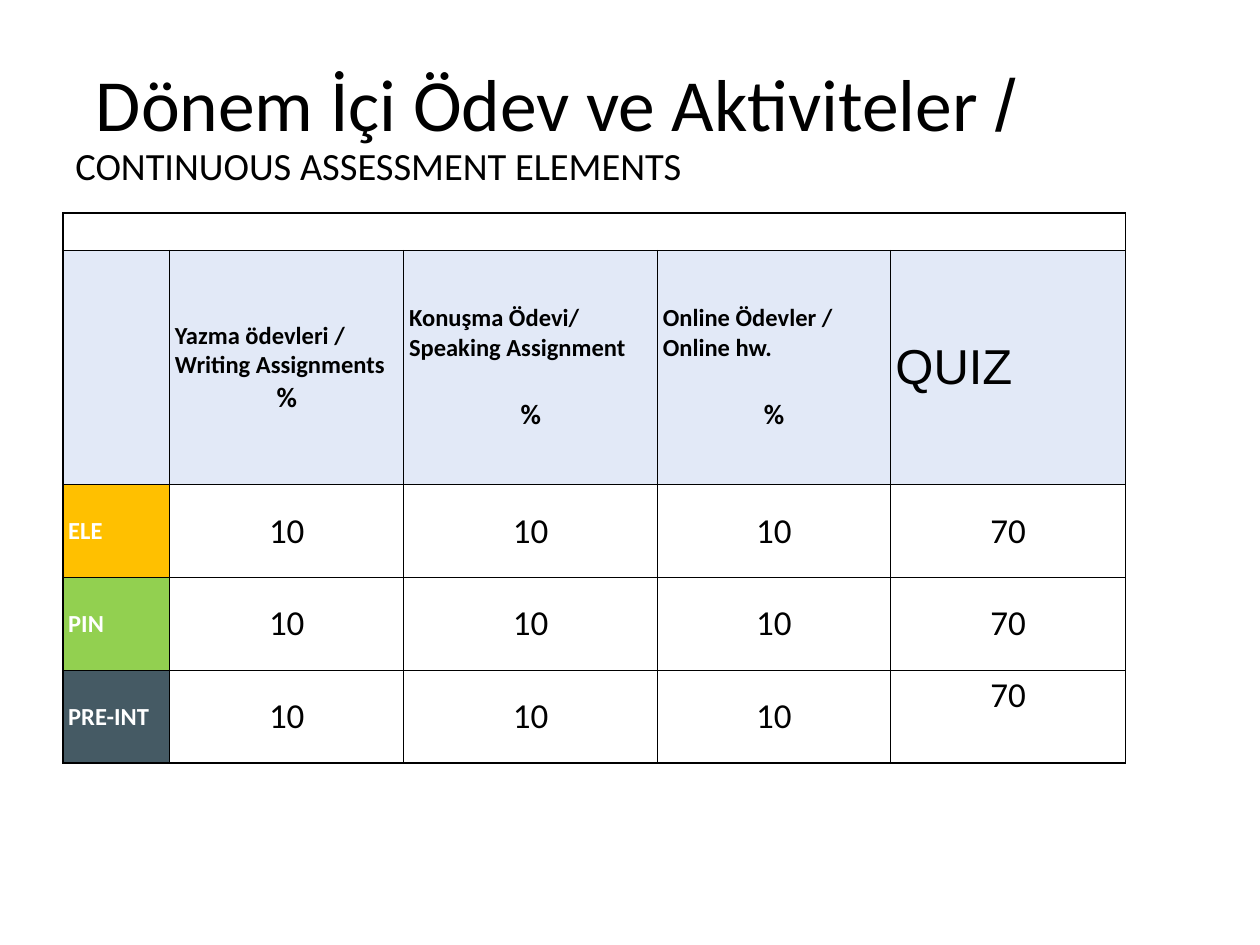
from dataclasses import dataclass

from lxml.etree import SubElement
from pptx import Presentation
from pptx.dml.color import RGBColor
from pptx.enum.text import MSO_ANCHOR as Anchor, PP_ALIGN as Align
from pptx.oxml.ns import qn
from pptx.util import Pt


@dataclass(frozen=True)
class Theme:
    ink: str = "000000"
    white: str = "FFFFFF"
    header: str = "E2E9F7"
    elementary: str = "FFC000"
    pre_intermediate: str = "92D050"
    intermediate: str = "455A64"
    body_font: str = "Calibri"
    alt_font: str = "Arial"
    title_size: int = 42
    quiz_size: int = 28
    subtitle_size: int = 22
    value_size: int = 20
    percent_size: int = 16
    label_size: int = 14
    border: float = 0.75


THEME = Theme()


def add_text(para, text, size, font=THEME.body_font, color=THEME.ink, bold=False):
    span = para.add_run()
    span.text = text
    span.font.size = Pt(size)
    span.font.name = font
    span.font.bold = bold
    span.font.color.rgb = RGBColor.from_string(color)


class Page:
    def __init__(self, deck, theme):
        self.theme = theme
        self.slide = deck.slides.add_slide(deck.slide_layouts[6])

    def title(self, left, top, width, height, spans):
        box = self.slide.shapes.add_textbox(Pt(left), Pt(top), Pt(width), Pt(height))
        frame = box.text_frame
        frame.word_wrap = True
        frame.vertical_anchor = Anchor.BOTTOM
        para = frame.paragraphs[0]
        para.line_spacing = 0.9
        for text, size, font in spans:
            add_text(para, text, size, font)

    def table(self, left, top, widths, heights):
        table = self.slide.shapes.add_table(
            len(heights), len(widths), Pt(left), Pt(top),
            Pt(sum(widths)), Pt(sum(heights))).table
        table.first_row = table.horz_banding = False
        for column, width in zip(table.columns, widths):
            column.width = Pt(width)
        for row, height in zip(table.rows, heights):
            row.height = Pt(height)
        for cell in table.iter_cells():
            self.cell_style(cell)
        return table

    def cell_style(self, cell):
        cell.margin_left = cell.margin_right = Pt(3)
        cell.margin_top = cell.margin_bottom = Pt(2)
        cell.vertical_anchor = Anchor.MIDDLE
        properties = cell._tc.get_or_add_tcPr()
        for side in ("a:lnL", "a:lnR", "a:lnT", "a:lnB"):
            line = SubElement(properties, qn(side), w=str(Pt(self.theme.border)))
            fill = SubElement(line, qn("a:solidFill"))
            SubElement(fill, qn("a:srgbClr"), val=self.theme.ink)
        cell.fill.background()

    def fill(self, cell, color):
        cell.fill.solid()
        cell.fill.fore_color.rgb = RGBColor.from_string(color)

    def header(self, cell, label, gap):
        frame = cell.text_frame
        add_text(frame.paragraphs[0], label, self.theme.label_size, bold=True)
        para = frame.add_paragraph()
        para.alignment = Align.CENTER
        para.space_before = Pt(gap)
        add_text(para, "%", self.theme.percent_size, bold=True)

    def level(self, cells, name, color, values):
        label, *numbers = cells
        self.fill(label, color)
        add_text(label.text_frame.paragraphs[0], name, self.theme.label_size,
                 color=self.theme.white, bold=True)
        for cell, value in zip(numbers, values):
            para = cell.text_frame.paragraphs[0]
            para.alignment = Align.CENTER
            add_text(para, str(value), self.theme.value_size)


def main():
    deck = Presentation()
    deck.slide_width, deck.slide_height = Pt(720), Pt(540)
    page = Page(deck, THEME)

    # Title in two languages
    page.title(36, 21.6, 588.5, 90, [
        (" ", THEME.title_size, THEME.alt_font),
        ("Dönem İçi Ödev ve Aktiviteler ", THEME.title_size, THEME.body_font),
        ("/ ", THEME.title_size, THEME.alt_font),
        ("CONTINUOUS ASSESSMENT ELEMENTS", THEME.subtitle_size, THEME.body_font),
    ])

    # Assessment grid with an empty band on top
    table = page.table(36, 121.7, [61, 133.8, 145, 133, 134.6],
                       [21.4, 134, 53, 53, 53])
    band = table.cell(0, 0)
    band.merge(table.cell(0, 4))
    SubElement(band.text_frame.paragraphs[0]._p, qn("a:endParaRPr"),
               sz=str(THEME.label_size * 100))

    # Column headings
    headings = [
        ("Yazma ödevleri / Writing Assignments", 0),
        ("Konuşma Ödevi/ Speaking Assignment", 19.5),
        ("Online Ödevler / Online hw.", 19.5),
    ]
    for column in range(5):
        page.fill(table.cell(1, column), THEME.header)
    for column, (label, gap) in enumerate(headings, start=1):
        page.header(table.cell(1, column), label, gap)
    add_text(table.cell(1, 4).text_frame.paragraphs[0], "QUIZ",
             THEME.quiz_size, THEME.alt_font)

    # One row per level
    levels = [
        ("ELE", THEME.elementary),
        ("PIN", THEME.pre_intermediate),
        ("PRE-INT", THEME.intermediate),
    ]
    for row, (name, color) in enumerate(levels, start=2):
        page.level(table.rows[row].cells, name, color, [10, 10, 10, 70])
    table.cell(4, 4).vertical_anchor = Anchor.TOP

    deck.save("out.pptx")


if __name__ == "__main__":
    main()
